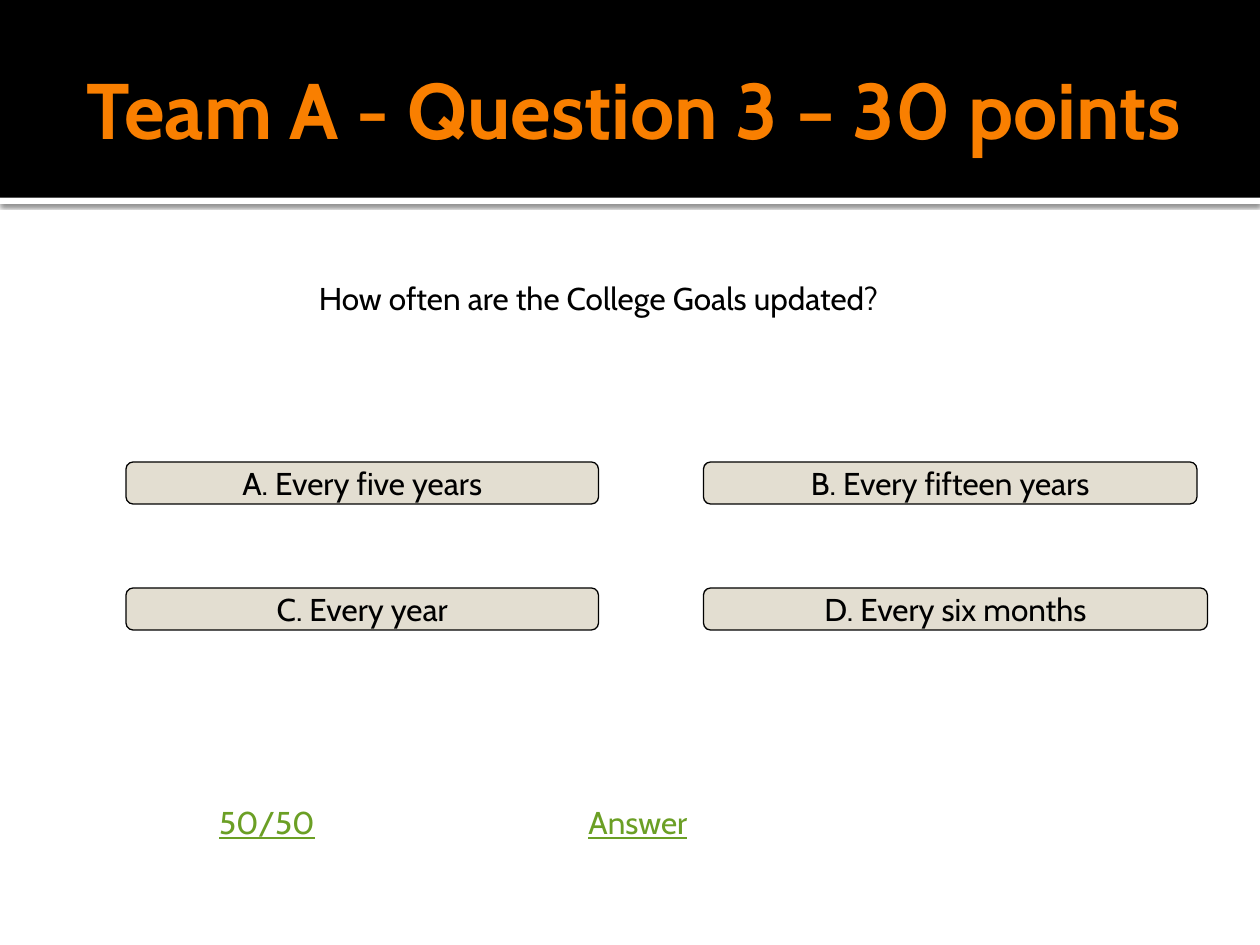
from dataclasses import dataclass

from lxml import etree
from pptx import Presentation
from pptx.dml.color import RGBColor
from pptx.enum.shapes import MSO_SHAPE
from pptx.enum.text import MSO_ANCHOR, PP_ALIGN
from pptx.oxml.ns import qn
from pptx.util import Pt

RECTANGLE, ROUNDED = MSO_SHAPE.RECTANGLE, MSO_SHAPE.ROUNDED_RECTANGLE
MIDDLE, CENTER = MSO_ANCHOR.MIDDLE, PP_ALIGN.CENTER
TITLE_ONLY = 5

BLACK, WHITE = "000000", "FFFFFF"
ORANGE, SAND, GREEN = "F97F00", "E3DED1", "6B9F25"
SLIDE_WIDTH, SLIDE_HEIGHT = 720, 540
BAND_HEIGHT, STRIP_HEIGHT = 113, 3.6

BODY = {"name": "Cabin", "size": Pt(18), "bold": False}
HEADING = {"name": "Cabin", "size": Pt(45), "bold": True}
LINK = {**BODY, "underline": True}


@dataclass
class Box:
    left: float
    top: float
    width: float
    height: float

    def lengths(self) -> tuple:
        return Pt(self.left), Pt(self.top), Pt(self.width), Pt(self.height)


@dataclass
class Answer:
    text: str
    box: Box


ANSWERS = [
    Answer("A. Every five years", Box(72, 264, 270, 24)),
    Answer("B. Every fifteen years", Box(402, 264, 282, 24)),
    Answer("C. Every year", Box(72, 336, 270, 24)),
    Answer("D. Every six months", Box(402, 336, 288, 24)),
]
QUESTION = "How often are the College Goals updated?"
LINKS = ["50/50", "Answer", ""]


def rgb(color: str) -> RGBColor:
    return RGBColor.from_string(color)


def write(frame, text: str, font: dict, color: str, margin: float = 0, indent: float = 0) -> None:
    paragraph = frame.paragraphs[0]
    paragraph.alignment = CENTER
    properties = paragraph._p.get_or_add_pPr()
    properties.set("marL", str(Pt(margin)))
    properties.set("indent", str(Pt(indent)))
    run = paragraph.add_run()
    run.text = text
    for name, value in font.items():
        setattr(run.font, name, value)
    run.font.color.rgb = rgb(color)


def add_filled(slide, kind, box: Box, color: str):
    shape = slide.shapes.add_shape(kind, *box.lengths())
    shape.shadow.inherit = False
    shape.fill.solid()
    shape.fill.fore_color.rgb = rgb(color)
    shape.line.fill.background()
    return shape


def add_soft_shadow(shape) -> None:
    effects = shape._element.spPr.find(qn("a:effectLst"))
    shadow = etree.SubElement(effects, qn("a:outerShdw"), blurRad=str(Pt(2.5)),
                              dist=str(Pt(0.8)), dir="5400000", rotWithShape="0")
    color = etree.SubElement(shadow, qn("a:srgbClr"), val=BLACK)
    etree.SubElement(color, qn("a:alpha"), val="60000")


def add_header(slide, text: str) -> None:
    strip = add_filled(slide, RECTANGLE, Box(0, BAND_HEIGHT, SLIDE_WIDTH, STRIP_HEIGHT), WHITE)
    add_soft_shadow(strip)
    add_filled(slide, RECTANGLE, Box(0, 0, SLIDE_WIDTH, BAND_HEIGHT), BLACK)
    title = slide.shapes.title
    slide.shapes._spTree.append(title._element)  # bring in front of the band
    title.left, title.top, title.width, title.height = Box(36, 12, 648, 99).lengths()
    frame_format = {
        "vertical_anchor": MIDDLE, "word_wrap": True,
        "margin_left": Pt(7.2), "margin_right": Pt(3.6),
        "margin_top": Pt(3.6), "margin_bottom": Pt(3.6),
    }
    for name, value in frame_format.items():
        setattr(title.text_frame, name, value)
    write(title.text_frame, text, HEADING, ORANGE)


def add_question(slide, text: str) -> None:
    frame = slide.shapes.add_textbox(*Box(162, 156, 360, 29).lengths()).text_frame
    frame.word_wrap = True
    write(frame, text, BODY, BLACK, margin=27, indent=-27)


def add_answer(slide, answer: Answer) -> None:
    shape = add_filled(slide, ROUNDED, answer.box, SAND)
    shape.line.color.rgb = rgb(BLACK)
    shape.line.width = Pt(0.75)
    frame = shape.text_frame
    frame.word_wrap = False
    frame.vertical_anchor = MIDDLE
    write(frame, answer.text, BODY, BLACK)


def add_links(slide, labels: list[str]) -> None:
    box = Box(42, 456, 636, 42)
    table = slide.shapes.add_table(1, len(labels), *box.lengths()).table
    table.first_row = table.horz_banding = False
    for cell, label in zip(table.rows[0].cells, labels):
        cell.fill.background()
        if label:
            write(cell.text_frame, label, LINK, GREEN, margin=9)


def main() -> None:
    presentation = Presentation()
    presentation.slide_width, presentation.slide_height = Pt(SLIDE_WIDTH), Pt(SLIDE_HEIGHT)
    slide = presentation.slides.add_slide(presentation.slide_layouts[TITLE_ONLY])
    add_header(slide, "Team A - Question 3 – 30 points")
    add_question(slide, QUESTION)
    for answer in ANSWERS:
        add_answer(slide, answer)
    add_links(slide, LINKS)
    presentation.save("out.pptx")


if __name__ == "__main__":
    main()
